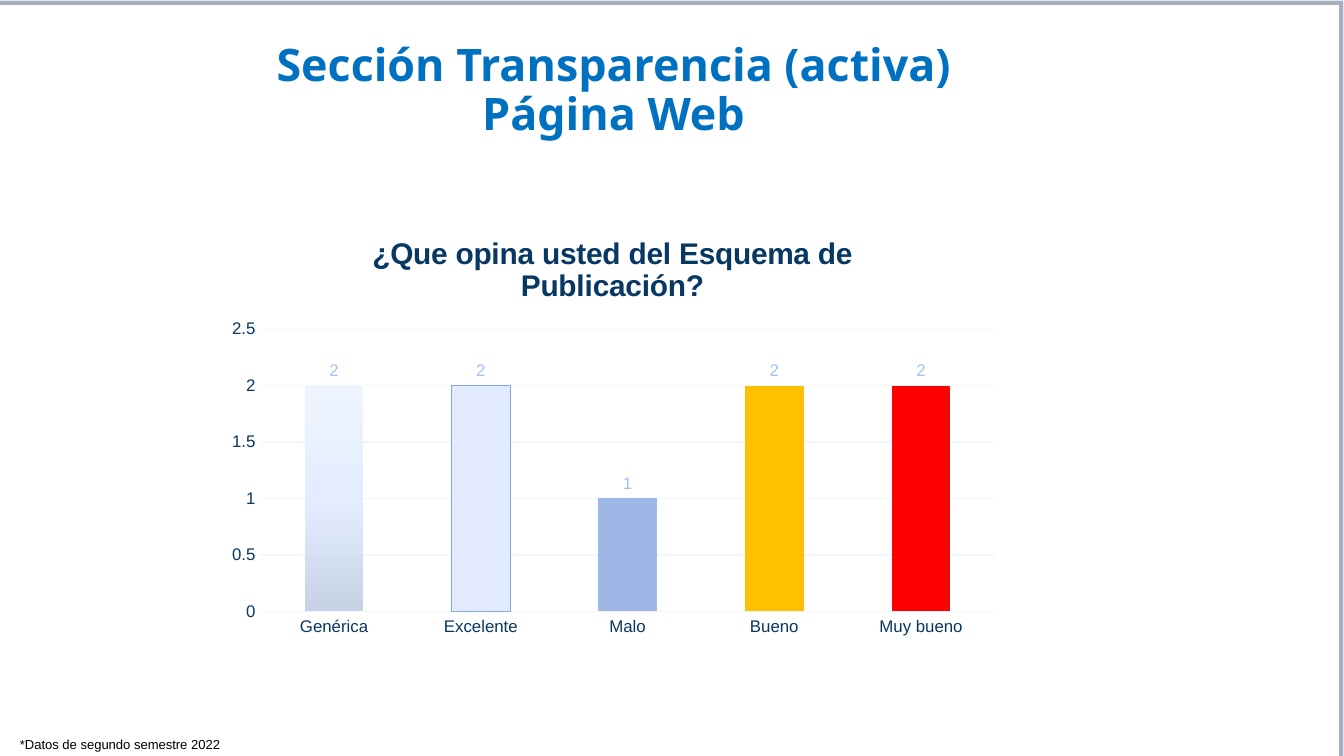
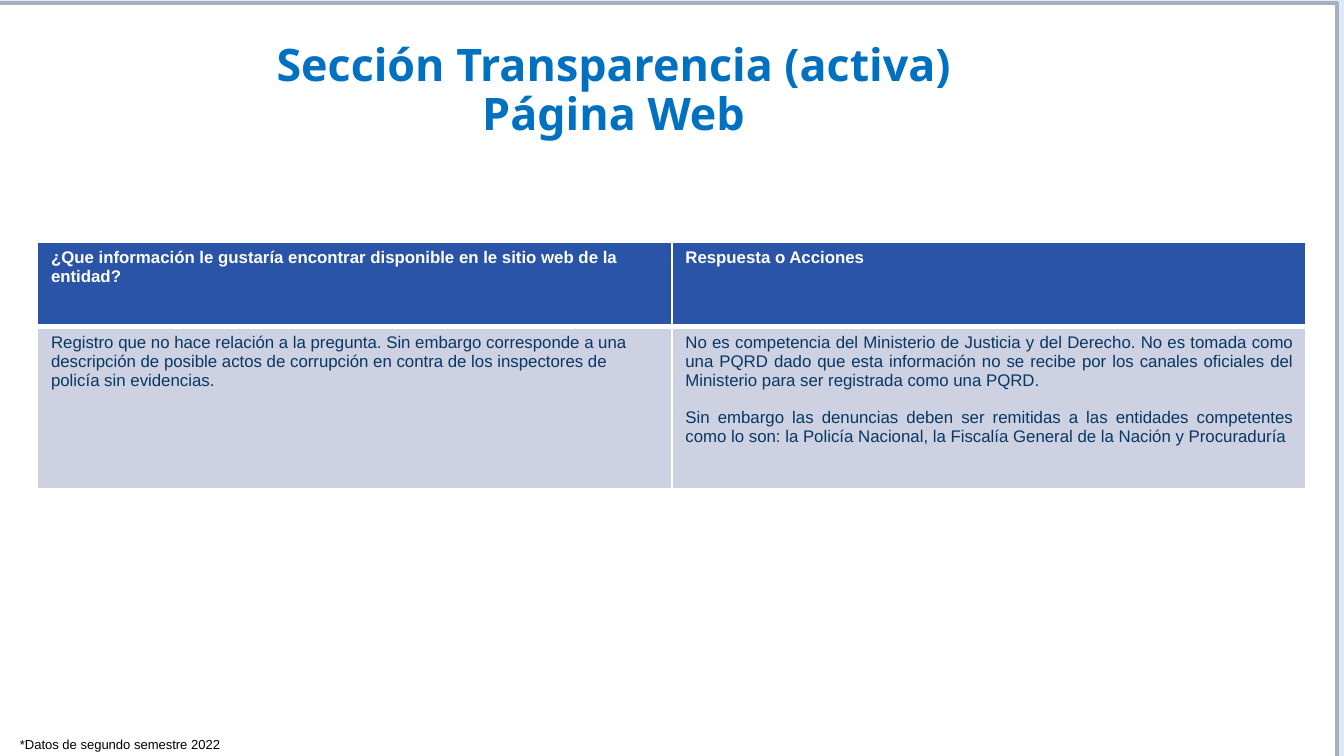
from dataclasses import dataclass
from typing import Optional

from lxml import etree
from pptx import Presentation
from pptx.chart.data import CategoryChartData
from pptx.dml.color import RGBColor
from pptx.enum import chart as ch, shapes, text
from pptx.oxml import ns
from pptx.util import Inches, Pt

# Shared look
BACKDROP = RGBColor(0xDC, 0xEA, 0xFB)
WHITE = RGBColor(0xFF, 0xFF, 0xFF)
BLACK = RGBColor(0, 0, 0)
FRAME_GRAY = RGBColor(0xA9, 0xAF, 0xBC)
TITLE_BLUE = RGBColor(0x00, 0x70, 0xC0)
NAVY = RGBColor(0x07, 0x37, 0x63)
GRID = RGBColor(0xF1, 0xF6, 0xFD)
LABEL_BLUE = RGBColor(0xA4, 0xC2, 0xF4)
BAR_EDGE = RGBColor(0x7F, 0xA8, 0xF0)
HEADER_BLUE = RGBColor(0x2A, 0x54, 0xA7)
ROW_GRAY = RGBColor(0xCD, 0xD1, 0xE1)
BODY_FONT, TITLE_FONT = "Arial", "Noto Sans"
ALIGN = text.PP_ALIGN

TITLE = "Sección Transparencia (activa)\vPágina Web"
FOOTNOTE = "*Datos de segundo semestre 2022"


@dataclass
class Bar:
    name: str
    value: int
    fill: Optional[RGBColor] = None
    edge: Optional[RGBColor] = None


@dataclass
class TableRow:
    height: float
    fill: RGBColor
    color: RGBColor
    bold: bool
    bottom: float
    cells: list
    aligns: tuple


CHART_WIDTH, CHART_HEIGHT = 5.91, 3.22
BARS = [
    Bar("Genérica", 2),
    Bar("Excelente", 2, RGBColor(0xE2, 0xEA, 0xFF), BAR_EDGE),
    Bar("Malo", 1, RGBColor(0x9F, 0xB7, 0xE7)),
    Bar("Bueno", 2, RGBColor(0xFF, 0xC0, 0x00)),
    Bar("Muy bueno", 2, RGBColor(0xFF, 0x00, 0x00)),
]
BAR_GRADIENT = [(0, "EEF4FF"), (50, "E3EDFF"), (100, "C7D2E5")]

ROWS = [
    TableRow(0.63, HEADER_BLUE, WHITE, True, 3, [
        ["¿Que información le gustaría encontrar disponible en le sitio web de la entidad?"],
        ["Respuesta o Acciones"],
    ], (ALIGN.LEFT, ALIGN.LEFT)),
    TableRow(1.21, ROW_GRAY, NAVY, False, 1, [
        ["Registro que no hace relación a la pregunta. Sin embargo corresponde a una "
         "descripción de posible actos de corrupción en contra de los inspectores de "
         "policía sin evidencias."],
        ["No es competencia del Ministerio de Justicia y del Derecho. No es tomada como "
         "una PQRD dado que esta información no se recibe por los canales oficiales del "
         "Ministerio para ser registrada como una PQRD.",
         "Sin embargo las denuncias deben ser remitidas a las entidades competentes "
         "como lo son: la Policía Nacional, la Fiscalía General de la Nación y Procuraduría"],
    ], (ALIGN.LEFT, ALIGN.JUSTIFY)),
]


def style_font(font, size: float, color: RGBColor, bold: bool = False,
               name: str = BODY_FONT) -> None:
    font.name, font.size, font.bold = name, Pt(size), bold
    font.color.rgb = color


def write(tf, paragraphs: list, *, size: float, color: RGBColor, bold: bool = False,
          name: str = BODY_FONT, align=ALIGN.LEFT, spacing: Optional[float] = None,
          gap: float = 0) -> None:
    """Fill a text frame, with a gap in points between paragraphs."""
    for i, content in enumerate(paragraphs):
        p = tf.add_paragraph() if i else tf.paragraphs[0]
        p.text = content
        p.alignment = align
        if spacing:
            p.line_spacing = spacing
        if i and gap:
            p.space_before = Pt(gap)
        for r in p.runs:
            style_font(r.font, size, color, bold, name)


def add_base_slide(prs, frame_left: float):
    """Slide with the framed page, title and footnote."""
    s = prs.slides.add_slide(prs.slide_layouts[5])
    frame = s.shapes.add_shape(shapes.MSO_SHAPE.RECTANGLE, Inches(frame_left),
                               Inches(0.02), Inches(10), Inches(5.63))
    frame.shadow.inherit = False
    frame.fill.solid()
    frame.fill.fore_color.rgb = WHITE
    frame.line.color.rgb = FRAME_GRAY
    frame.line.width = Pt(2)
    s.shapes.element.insert(2, frame.element)  # behind the title

    title = s.shapes.title
    title.left, title.top = Inches(0.13), Inches(0.04)
    title.width, title.height = Inches(8.87), Inches(1.28)
    tf = title.text_frame
    tf.auto_size = text.MSO_AUTO_SIZE.NONE
    tf.vertical_anchor = text.MSO_ANCHOR.MIDDLE
    tf.margin_left = tf.margin_right = Inches(0.07)
    tf.margin_top = tf.margin_bottom = Inches(0.04)
    write(tf, [TITLE], size=24, color=TITLE_BLUE, bold=True, name=TITLE_FONT,
          align=ALIGN.CENTER, spacing=0.9)

    note = s.shapes.add_textbox(Inches(0.05), Inches(5.43), Inches(3.24), Inches(0.22))
    note.text_frame.word_wrap = True
    note.text_frame.auto_size = text.MSO_AUTO_SIZE.SHAPE_TO_FIT_TEXT
    write(note.text_frame, [FOOTNOTE], size=7, color=BLACK)
    return s


def set_layout(parent, index: int, target: Optional[str] = None, **inches: float) -> None:
    """Place a chart part by x, y, w and h in inches within the chart."""
    for old in parent.findall(ns.qn("c:layout")):
        parent.remove(old)
    layout = etree.Element(ns.qn("c:layout"))
    manual = etree.SubElement(layout, ns.qn("c:manualLayout"))
    values = {"layoutTarget": target} if target else {}
    values.update(xMode="edge", yMode="edge")
    for tag, length in inches.items():
        values[tag] = length / (CHART_WIDTH if tag in "xw" else CHART_HEIGHT)
    for tag, val in values.items():
        etree.SubElement(manual, ns.qn(f"c:{tag}")).set("val", str(val))
    parent.insert(index, layout)


def set_gradient(fill, sp_pr, stops: list) -> None:
    fill.gradient()
    fill.gradient_angle = 270
    gs_list = sp_pr.find(".//" + ns.qn("a:gsLst"))
    for old in list(gs_list):
        gs_list.remove(old)
    for pos, color in stops:
        gs = etree.SubElement(gs_list, ns.qn("a:gs"), pos=str(pos * 1000))
        etree.SubElement(gs, ns.qn("a:srgbClr"), val=color)


def add_opinion_chart(s) -> None:
    data = CategoryChartData()
    data.categories = [b.name for b in BARS]
    data.add_series("Series 1", [b.value for b in BARS])
    chart = s.shapes.add_chart(ch.XL_CHART_TYPE.COLUMN_CLUSTERED, Inches(1.61), Inches(1.58),
                               Inches(CHART_WIDTH), Inches(CHART_HEIGHT), data).chart
    style_font(chart.font, 10, NAVY)
    chart.has_legend = False
    chart.has_title = True
    write(chart.chart_title.text_frame, ["¿Que opina usted del Esquema de Publicación?"],
          size=16, color=NAVY, bold=True, align=ALIGN.CENTER)
    set_layout(chart.chart_title._element, 1, x=1.12, y=0.12)
    set_layout(chart._chartSpace.find(".//" + ns.qn("c:plotArea")), 0, "inner",
               x=0.33, y=0.87, w=5.46, h=2.1)

    # Axes
    cat, val = chart.category_axis, chart.value_axis
    for axis in (cat, val):
        axis.major_tick_mark = axis.minor_tick_mark = ch.XL_TICK_MARK.NONE
        style_font(axis.tick_labels.font, 9, NAVY)
    val.minimum_scale, val.maximum_scale, val.major_unit = 0, 2.5, 0.5
    val.format.line.fill.background()
    for line in (cat.format.line, val.major_gridlines.format.line):
        line.color.rgb = GRID
        line.width = Pt(0.75)

    # Bars and their values
    plot = chart.plots[0]
    plot.gap_width = 150
    plot.vary_by_categories = False
    series = plot.series[0]
    series.invert_if_negative = False
    set_gradient(series.format.fill, series._element.get_or_add_spPr(), BAR_GRADIENT)
    for i, bar in enumerate(BARS):
        if bar.fill is None:
            continue
        fmt = series.points[i].format
        fmt.fill.solid()
        fmt.fill.fore_color.rgb = bar.fill
        if bar.edge is not None:
            fmt.line.color.rgb = bar.edge
            fmt.line.width = Pt(0.5)
    labels = series.data_labels
    labels.show_value = True
    labels.position = ch.XL_LABEL_POSITION.OUTSIDE_END
    style_font(labels.font, 9, LABEL_BLUE)


def set_borders(cell, **widths: float) -> None:
    """White borders; widths in points by side (L, R, T, B)."""
    tc_pr = cell._tc.get_or_add_tcPr()
    for side, width in widths.items():
        ln = etree.SubElement(tc_pr, ns.qn(f"a:ln{side}"), w=str(int(Pt(width))))
        fill = etree.SubElement(ln, ns.qn("a:solidFill"))
        etree.SubElement(fill, ns.qn("a:srgbClr"), val=str(WHITE))


def add_answers_table(s) -> None:
    height = sum(row.height for row in ROWS)
    table = s.shapes.add_table(len(ROWS), 2, Inches(0.28), Inches(1.8),
                               Inches(9.43), Inches(height)).table
    for column in table.columns:
        column.width = Inches(4.72)
    for i, row in enumerate(ROWS):
        table.rows[i].height = Inches(row.height)
        top = ROWS[i - 1].bottom if i else 1
        for j, paragraphs in enumerate(row.cells):
            cell = table.cell(i, j)
            set_borders(cell, L=1, R=1, T=top, B=row.bottom)
            cell.fill.solid()
            cell.fill.fore_color.rgb = row.fill
            write(cell.text_frame, paragraphs, size=9, color=row.color, bold=row.bold,
                  align=row.aligns[j], gap=10)


def main() -> None:
    prs = Presentation()
    prs.slide_width = Inches(10)
    prs.slide_height = prs.slide_width * 9 // 16
    backdrop = prs.slide_master.background.fill
    backdrop.solid()
    backdrop.fore_color.rgb = BACKDROP

    add_opinion_chart(add_base_slide(prs, -0.02))
    add_answers_table(add_base_slide(prs, -0.05))
    prs.save("out.pptx")


if __name__ == "__main__":
    main()
